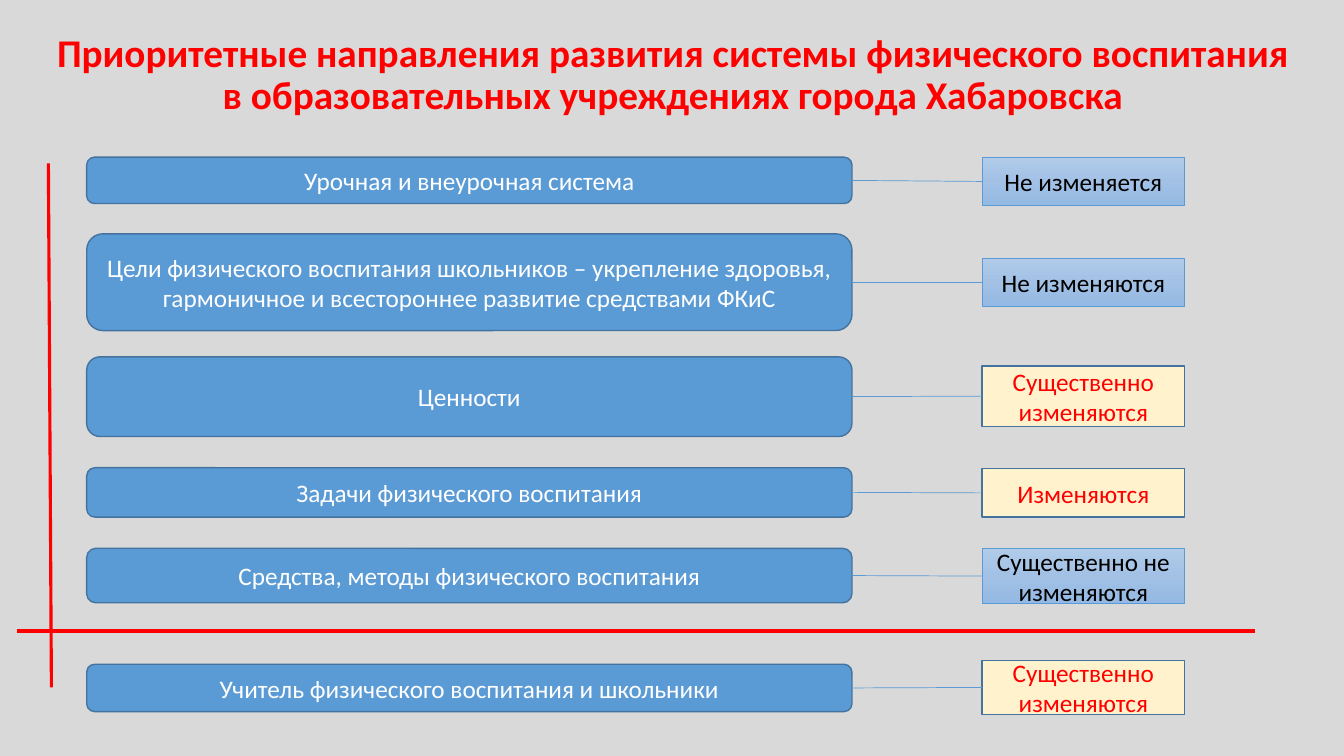
from copy import deepcopy

from lxml.etree import SubElement
from pptx import Presentation
from pptx.dml.color import RGBColor
from pptx.enum.shapes import MSO_CONNECTOR, MSO_SHAPE
from pptx.enum.text import MSO_ANCHOR, PP_ALIGN
from pptx.oxml.ns import qn
from pptx.util import Inches, Pt

# Content
TITLE = [
    "Приоритетные направления развития системы физического воспитания",
    "в образовательных учреждениях города Хабаровска",
]
# direction, top, height, status, status top, status height, is it changing
ROWS = [
    ("Урочная и внеурочная система", 1.56, 0.46,
     "Не изменяется", 1.56, 0.48, False),
    ("Цели физического воспитания школьников – укрепление здоровья, "
     "гармоничное и всестороннее развитие средствами ФКиС", 2.32, 0.96,
     "Не изменяются", 2.56, 0.48, False),
    ("Ценности", 3.54, 0.79,
     "Существенно изменяются", 3.63, 0.6, True),
    ("Задачи физического воспитания", 4.64, 0.49,
     "Изменяются", 4.65, 0.48, True),
    ("Средства, методы физического воспитания", 5.44, 0.54,
     "Существенно не изменяются", 5.44, 0.55, False),
    ("Учитель физического воспитания и школьники", 6.59, 0.47,
     "Существенно изменяются", 6.55, 0.54, True),
]
AXES = [(0.17, 6.26, 12.45, 6.26), (0.48, 1.62, 0.51, 6.82)]

# Layout and colours
BAR_LEFT, BAR_WIDTH = 0.86, 7.59
STATUS_LEFT, STATUS_WIDTH = 9.74, 2.01
FONT = "Calibri"
GRAY = RGBColor(0xD9, 0xD9, 0xD9)
RED = RGBColor(0xFF, 0x00, 0x00)
WHITE = RGBColor(0xFF, 0xFF, 0xFF)
BLACK = RGBColor(0x00, 0x00, 0x00)
BLUE = RGBColor(0x5B, 0x9B, 0xD5)
DARK_BLUE = RGBColor(0x43, 0x73, 0x9E)
CREAM = RGBColor(0xFF, 0xF2, 0xCC)
GRADIENT = [
    (0, RGBColor(0xB1, 0xCB, 0xE9)),
    (0.5, RGBColor(0xA3, 0xC1, 0xE5)),
    (1, RGBColor(0x93, 0xB9, 0xE4)),
]


def write(sp, lines, size, color, bold=False):
    tf = sp.text_frame
    tf.word_wrap = True
    tf.vertical_anchor = MSO_ANCHOR.MIDDLE
    p = tf.paragraphs[0]
    p.alignment = PP_ALIGN.CENTER
    for i, line in enumerate(lines):
        if i:
            p.add_line_break()
        r = p.add_run()
        r.text = line
        r.font.name, r.font.size, r.font.bold = FONT, Pt(size), bold
        r.font.color.rgb = color
    return p


def fill_gradient(sp):
    sp.fill.gradient()
    sp.fill.gradient_angle = 270
    first = sp.fill._fill._gradFill.gsLst[0]
    first.addnext(deepcopy(first))  # middle stop
    for stop, (position, color) in zip(sp.fill.gradient_stops, GRADIENT):
        stop.position = position
        stop.color.rgb = color


def add_box(s, kind, box, text, color, fill, line, width):
    sp = s.shapes.add_shape(kind, *map(Inches, box))
    sp.shadow.inherit = False
    if fill is None:
        fill_gradient(sp)
    else:
        sp.fill.solid()
        sp.fill.fore_color.rgb = fill
    sp.line.color.rgb = line
    sp.line.width = Pt(width)
    write(sp, [text], 18, color)


def add_line(s, ends, color, width):
    line = s.shapes.add_connector(MSO_CONNECTOR.STRAIGHT, *map(Inches, ends))
    line.line.color.rgb = color
    line.line.width = Pt(width)
    SubElement(line._element.spPr, qn("a:effectLst"))


def main():
    prs = Presentation()
    prs.slide_width, prs.slide_height = Inches(13.33), Inches(7.5)
    s = prs.slides.add_slide(prs.slide_layouts[6])
    s.background.fill.solid()
    s.background.fill.fore_color.rgb = GRAY

    # Title
    title = s.shapes.add_textbox(*map(Inches, (0.17, 0.16, 13, 1.18)))
    write(title, TITLE, 28, RED, bold=True).line_spacing = 0.9

    # Directions, their statuses and the links between them
    for text, top, height, status, s_top, s_height, changing in ROWS:
        add_box(s, MSO_SHAPE.ROUNDED_RECTANGLE,
                (BAR_LEFT, top, BAR_WIDTH, height),
                text, WHITE, BLUE, DARK_BLUE, 1)
        style = (RED, CREAM, DARK_BLUE, 1) if changing else (BLACK, None, BLUE, 0.5)
        add_box(s, MSO_SHAPE.RECTANGLE,
                (STATUS_LEFT, s_top, STATUS_WIDTH, s_height), status, *style)
        add_line(s, (BAR_LEFT + BAR_WIDTH, top + height / 2,
                     STATUS_LEFT, s_top + s_height / 2), BLUE, 0.5)

    # Red axes
    for ends in AXES:
        add_line(s, ends, RED, 2.25)

    prs.save("out.pptx")


if __name__ == "__main__":
    main()
